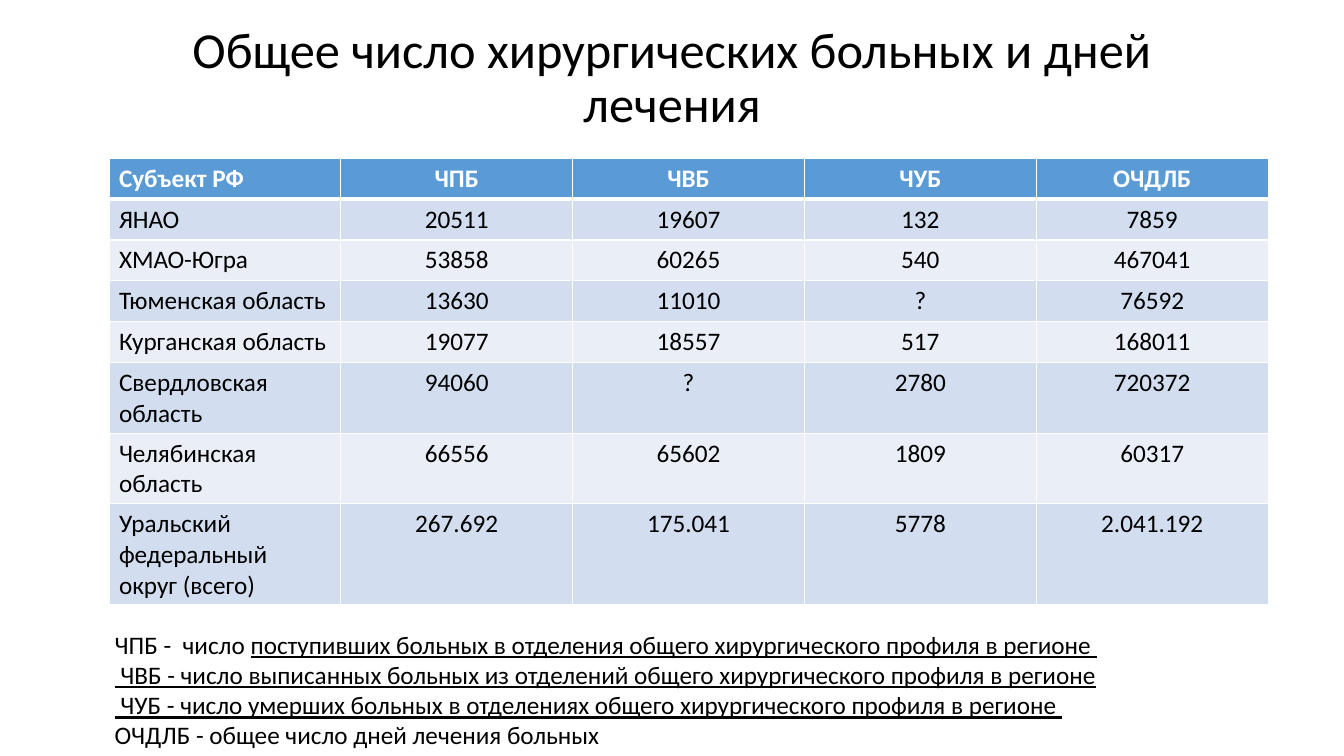
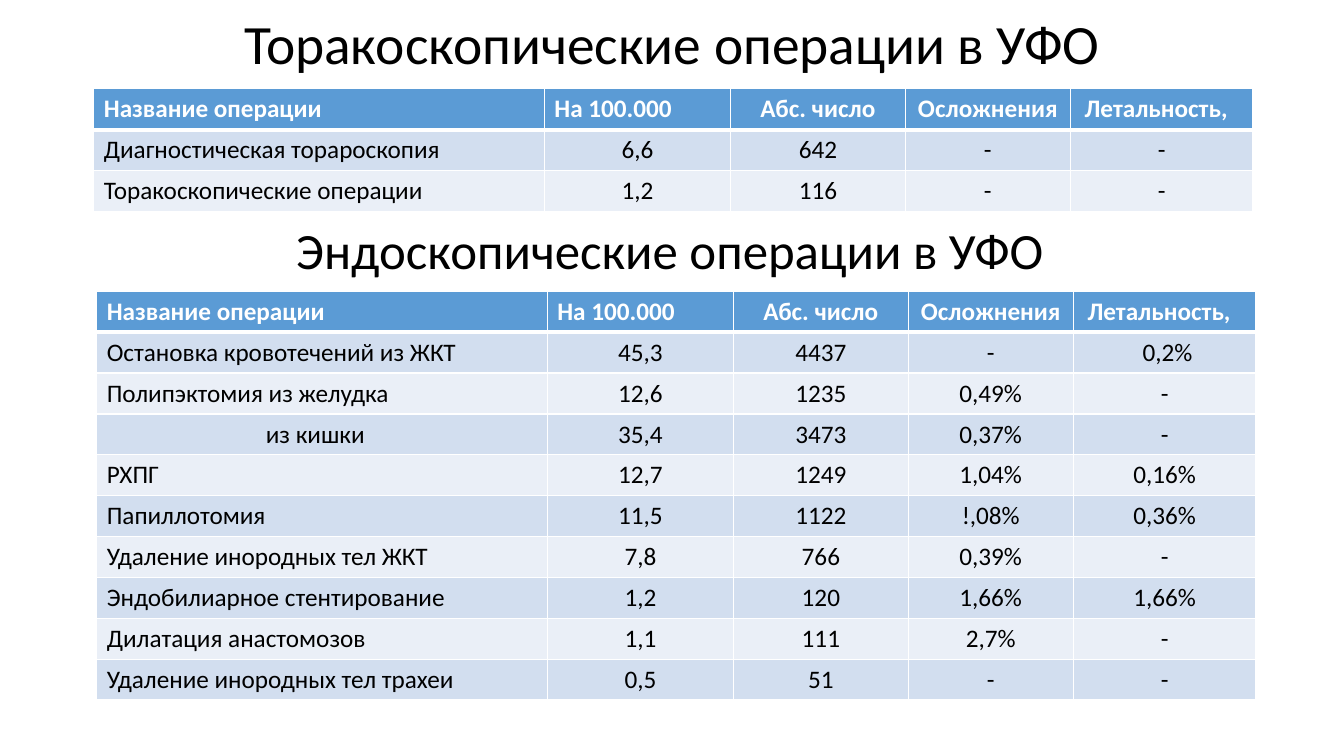
from lxml import etree
from pptx import Presentation
from pptx.dml.color import RGBColor
from pptx.enum.text import MSO_ANCHOR as Anchor, PP_ALIGN as Align
from pptx.oxml.ns import qn
from pptx.util import Pt

FONT = "Calibri"
BODY_SIZE = 18
COLORS = {
    "text": "000000",
    "white": "FFFFFF",
    "header": "5B9BD5",
    "odd": "D2DEEF",
    "even": "EAEFF7",
}

CONTENT_WIDTH = 828
ROW_HEIGHT = 29.2
CELL_MARGIN = 7.2
REGION_COLUMNS = [CONTENT_WIDTH / 5] * 5
REGION_HEIGHTS = [ROW_HEIGHT] * 5 + [50.4, 50.4, 72]
OPERATION_COLUMNS = [321.8, 133.2, 124.6, 118.1, 130.3]

REGIONS = [
    ("Субъект РФ", "ЧПБ", "ЧВБ", "ЧУБ", "ОЧДЛБ"),
    ("ЯНАО", "20511", "19607", "132", "7859"),
    ("ХМАО-Югра", "53858", "60265", "540", "467041"),
    ("Тюменская область", "13630", "11010", "?", "76592"),
    ("Курганская область", "19077", "18557", "517", "168011"),
    ("Свердловская область", "94060", "?", "2780", "720372"),
    ("Челябинская область", "66556", "65602", "1809", "60317"),
    ("Уральский федеральный округ (всего)", "267.692", "175.041", "5778", "2.041.192"),
]

OPERATION_HEADER = ("Название операции", "На 100.000", "Абс. число", "Осложнения", "Летальность,")
THORACOSCOPIC = [
    OPERATION_HEADER,
    ("Диагностическая торароскопия", "6,6", "642", "-", "-"),
    ("Торакоскопические операции", "1,2", "116", "-", "-"),
]
ENDOSCOPIC = [
    OPERATION_HEADER,
    ("Остановка кровотечений из ЖКТ", "45,3", "4437", "-", " 0,2%"),
    ("Полипэктомия из желудка", "12,6", "1235", "0,49%", "-"),
    ("из кишки", "35,4", "3473", "0,37%", "-"),
    ("РХПГ", "12,7", "1249", "1,04%", "0,16%"),
    ("Папиллотомия", "11,5", "1122", "!,08%", "0,36%"),
    ("Удаление инородных тел ЖКТ", "7,8", "766", "0,39%", "-"),
    ("Эндобилиарное стентирование", "1,2", "120", "1,66%", "1,66%"),
    ("Дилатация анастомозов", "1,1", "111", "2,7%", "-"),
    ("Удаление инородных тел трахеи", "0,5", "51", "-", "-"),
]

ABBREVIATIONS = [
    [("ЧПБ -  число ", False),
     ("поступивших больных в отделения общего хирургического профиля в регионе ", True)],
    [(" ЧВБ - число выписанных больных из отделений общего хирургического профиля в регионе", True)],
    [(" ЧУБ - число умерших больных в отделениях общего хирургического профиля в регионе ", True)],
    [("ОЧДЛБ - общее число дней лечения больных", False)],
]


def color(name):
    return RGBColor.from_string(COLORS[name])


def style_run(span, size=BODY_SIZE, shade="text", bold=False, underline=False):
    font = span.font
    font.name = FONT
    font.size = Pt(size)
    font.bold = bold
    font.underline = underline
    font.color.rgb = color(shade)


def add_box(page, left, top, width, height):
    box = page.shapes.add_textbox(Pt(left), Pt(top), Pt(width), Pt(height))
    box.text_frame.word_wrap = True
    return box.text_frame


def add_heading(page, text, left, top, height, size, spacing=0.9):
    frame = add_box(page, left, top, CONTENT_WIDTH, height)
    frame.vertical_anchor = Anchor.MIDDLE
    frame.text = text
    para = frame.paragraphs[0]
    para.alignment = Align.CENTER
    para.line_spacing = spacing
    style_run(para.runs[0], size)


def add_legend(page, lines, left, top, height):
    frame = add_box(page, left, top, CONTENT_WIDTH, height)
    for index, line in enumerate(lines):
        para = frame.add_paragraph() if index else frame.paragraphs[0]
        for text, underline in line:
            span = para.add_run()
            span.text = text
            style_run(span, underline=underline)


def set_borders(cell, row):
    properties = cell._tc.get_or_add_tcPr()
    widths = {"lnL": 1, "lnR": 1, "lnT": 3 if row == 1 else 1, "lnB": 3 if row == 0 else 1}
    for side, width in widths.items():
        line = etree.SubElement(properties, qn(f"a:{side}"), w=str(Pt(width)))
        fill = etree.SubElement(line, qn("a:solidFill"))
        etree.SubElement(fill, qn("a:srgbClr"), val=COLORS["white"])


def fill_cell(cell, text, row, centered):
    header = row == 0
    set_borders(cell, row)
    cell.fill.solid()
    cell.fill.fore_color.rgb = color("header" if header else "odd" if row % 2 else "even")
    cell.text_frame.text = text
    para = cell.text_frame.paragraphs[0]
    para.alignment = Align.CENTER if centered else Align.LEFT
    style_run(para.runs[0], shade="white" if header else "text", bold=header)


def add_grid(page, rows, left, top, columns, heights=None, left_headers=(0,)):
    heights = heights or [ROW_HEIGHT] * len(rows)
    table = page.shapes.add_table(
        len(rows), len(columns), Pt(left), Pt(top), Pt(sum(columns)), Pt(sum(heights))
    ).table
    for column, width in zip(table.columns, columns):
        column.width = Pt(width)
    for row, values in enumerate(rows):
        table.rows[row].height = Pt(heights[row])
        for column, text in enumerate(values):
            centered = column not in left_headers if row == 0 else column > 0
            fill_cell(table.cell(row, column), text, row, centered)
    return table


def add_operations(page, rows, left, top):
    table = add_grid(page, rows, left, top, OPERATION_COLUMNS, left_headers=(0, 1))
    table.cell(0, 4).margin_right = Pt(CELL_MARGIN + 8)
    return table


def build_regions(page):
    add_heading(page, "Общее число хирургических больных и дней лечения", 66.2, 28.8, 55.4, 36)
    add_grid(page, REGIONS, 77.8, 113, REGION_COLUMNS, REGION_HEIGHTS)
    add_legend(page, ABBREVIATIONS, 74.9, 445.7, 94.3)


def build_operations(page):
    add_heading(page, "Торакоскопические операции в УФО", 66.2, 13, 41, 39.6)
    add_operations(page, THORACOSCOPIC, 67, 63.4)
    add_heading(page, "Эндоскопические операции в УФО", 64.8, 162.7, 41, 36.3, 0.7)
    table = add_operations(page, ENDOSCOPIC, 69.1, 208.1)
    table.cell(3, 0).margin_left = Pt(CELL_MARGIN + 113.6)


def main():
    deck = Presentation()
    deck.slide_width, deck.slide_height = Pt(960), Pt(540)
    for build in (build_regions, build_operations):
        build(deck.slides.add_slide(deck.slide_layouts[6]))
    deck.save("out.pptx")


if __name__ == "__main__":
    main()
